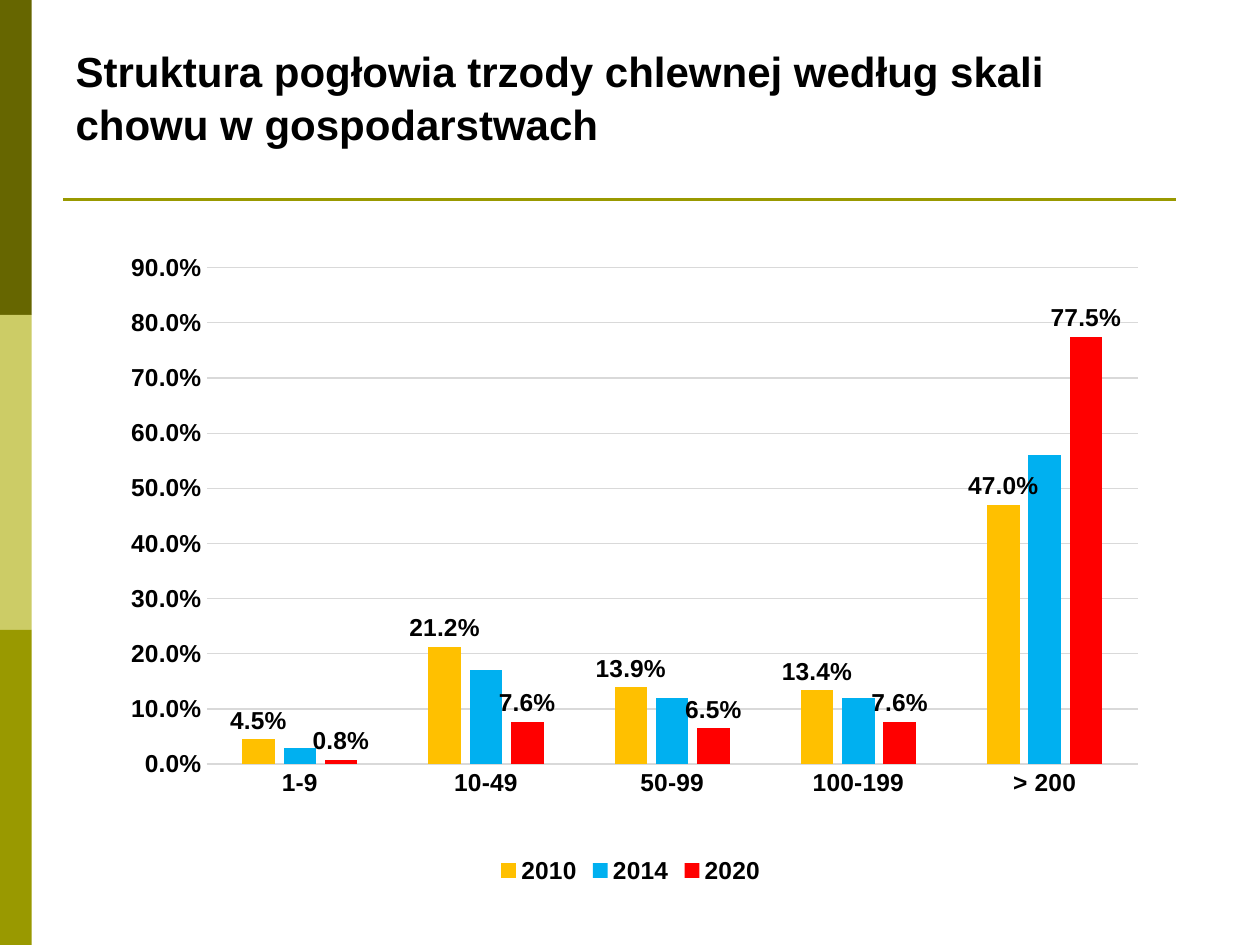
from lxml import etree
from pptx import Presentation
from pptx import util as u
from pptx.chart import data as chart_data
from pptx.dml.color import RGBColor
from pptx.enum import chart as ch
from pptx.enum import shapes, text
from pptx.oxml import ns

COLORS = {
    "text": "000000", "dark": "666600", "light": "CCCC66", "olive": "999900", "grid": "D9D9D9",
    "2010": "FFC000", "2014": "00B0F0", "2020": "FF0000",
}
VALUES = {
    "2010": (0.045, 0.212, 0.139, 0.134, 0.47),
    "2014": (0.03, 0.17, 0.12, 0.12, 0.56),
    "2020": (0.008, 0.076, 0.065, 0.076, 0.775),
}


def color(name):
    return RGBColor.from_string(COLORS[name])


def style_font(font, size):
    font.name = "Arial"
    font.size = u.Pt(size)
    font.bold = True
    font.color.rgb = color("text")


deck = Presentation()
deck.slide_width, deck.slide_height = u.Cm(25.4), u.Cm(19.05)
page = deck.slides.add_slide(deck.slide_layouts[5])

for row, name in enumerate(("dark", "light", "olive")):
    band = page.shapes.add_shape(
        shapes.MSO_SHAPE.RECTANGLE, 0, u.Cm(6.35 * row), u.Cm(0.64), u.Cm(6.35))
    band.shadow.inherit = False
    band.fill.solid()
    band.fill.fore_color.rgb = color(name)
    band.line.fill.background()

rule = page.shapes.add_connector(
    shapes.MSO_CONNECTOR.STRAIGHT, u.Cm(1.27), u.Cm(4.02), u.Cm(23.7), u.Cm(4.02))
rule.line.color.rgb = color("olive")
rule.line.width = u.Pt(1.5)
etree.SubElement(rule.element.spPr, ns.qn("a:effectLst"))

title = page.shapes.title
title.left, title.top, title.width, title.height = u.Cm(1.27), u.Cm(0.76), u.Cm(22.86), u.Cm(2.36)
title.text_frame.word_wrap = True
title.text_frame.auto_size = text.MSO_AUTO_SIZE.NONE
title.text_frame.vertical_anchor = text.MSO_ANCHOR.BOTTOM
para = title.text_frame.paragraphs[0]
para.alignment = text.PP_ALIGN.LEFT
para.line_spacing = 1.05
span = para.add_run()
span.text = "Struktura pogłowia trzody chlewnej według skali chowu w gospodarstwach"
style_font(span.font, 24)

herd = chart_data.CategoryChartData(number_format="0.0%")
herd.categories = ("1-9", "10-49", "50-99", "100-199", "> 200")
for year, shares in VALUES.items():
    herd.add_series(year, shares)
chart = page.shapes.add_chart(
    ch.XL_CHART_TYPE.COLUMN_CLUSTERED, u.Cm(2.11), u.Cm(4.93), u.Cm(21.21), u.Cm(13), herd).chart
style_font(chart.font, 14)
chart.has_title = False
chart.has_legend = True
chart.legend.position = ch.XL_LEGEND_POSITION.BOTTOM
chart.legend.include_in_layout = False
style_font(chart.legend.font, 14)

for axis in (chart.category_axis, chart.value_axis):
    axis.major_tick_mark = axis.minor_tick_mark = ch.XL_TICK_MARK.NONE
    style_font(axis.tick_labels.font, 14)
shares_axis = chart.value_axis
shares_axis.minimum_scale, shares_axis.maximum_scale, shares_axis.major_unit = 0, 0.9, 0.1
shares_axis.tick_labels.number_format = "0.0%"
shares_axis.tick_labels.number_format_is_linked = False
shares_axis.format.line.fill.background()
for line in (chart.category_axis.format.line, shares_axis.major_gridlines.format.line):
    line.color.rgb = color("grid")
    line.width = u.Pt(0.75)

plot = chart.plots[0]
plot.gap_width, plot.overlap, plot.vary_by_categories = 219, -27, False
for series in plot.series:
    series.format.fill.solid()
    series.format.fill.fore_color.rgb = color(series.name)
    series.invert_if_negative = False
    if series.name != "2014":
        labels = series.data_labels
        labels.show_value = True
        labels.position = ch.XL_LABEL_POSITION.OUTSIDE_END
        labels.number_format = "0.0%"
        labels.number_format_is_linked = False
        style_font(labels.font, 14)

area = chart.element.find(".//" + ns.qn("c:plotArea"))
for old in area.findall(ns.qn("c:layout")):
    area.remove(old)
layout = etree.Element(ns.qn("c:layout"))
area.insert(0, layout)
manual = etree.SubElement(layout, ns.qn("c:manualLayout"))
for tag, value in (("layoutTarget", "inner"), ("xMode", "edge"), ("yMode", "edge"),
                   ("x", "0.097"), ("y", "0.036"), ("w", "0.885"), ("h", "0.77")):
    etree.SubElement(manual, ns.qn("c:" + tag), val=value)

deck.save("out.pptx")
